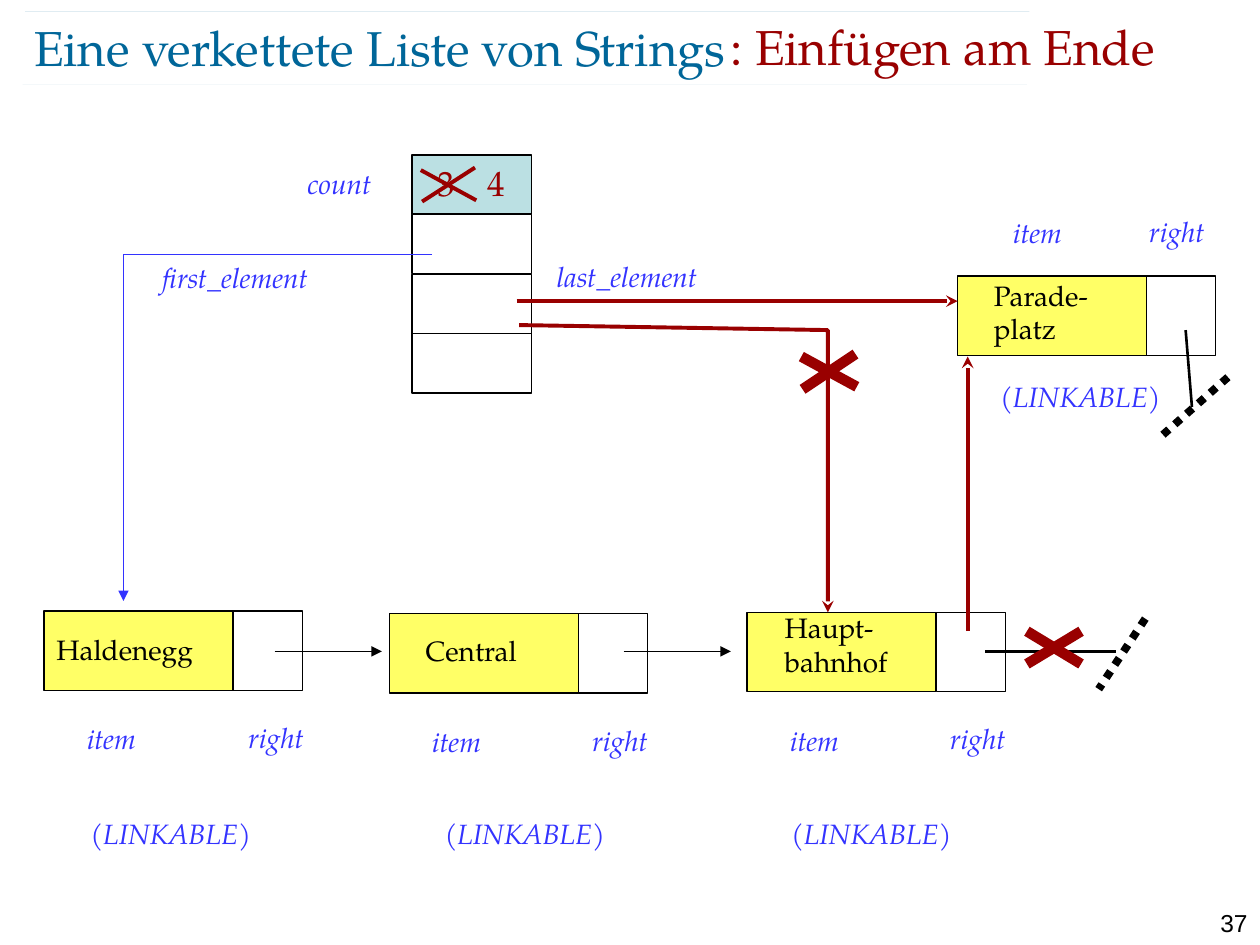
"""Build a slide that shows appending an element to a linked list of strings."""
from dataclasses import dataclass
from typing import Any, Optional

from lxml import etree
from pptx import Presentation
from pptx import util as u
from pptx.dml.color import RGBColor
from pptx.enum import dml, shapes, text
from pptx.oxml import ns

SCALE = 9144
SERIF = "TeX Gyre Pagella"
BLACK = RGBColor(0x00, 0x00, 0x00)
WHITE = RGBColor(0xFF, 0xFF, 0xFF)
YELLOW = RGBColor(0xFF, 0xFF, 0x66)
PALE_BLUE = RGBColor(0xBB, 0xE0, 0xE3)
BLUE = RGBColor(0x33, 0x33, 0xFF)
TEAL = RGBColor(0x00, 0x66, 0x99)
RED = RGBColor(0x99, 0x00, 0x00)

Point = tuple[int, int]
Box = tuple[int, int, int, int]


@dataclass(frozen=True)
class Label:
    text: str
    box: Box
    color: RGBColor = BLUE
    size: int = 16
    italic: bool = True
    font: str = SERIF


@dataclass(frozen=True)
class Node:
    name: str
    corner: Point
    name_box: Box
    item: Point
    right: Point
    type_corner: Point


@dataclass(frozen=True)
class Line:
    start: Point
    end: Point
    color: RGBColor = BLACK
    width: float = 0.75
    head: Optional[str] = None
    dash: Optional[dml.MSO_LINE] = None
    opacity: int = 100


NODES = [
    Node("Haldenegg", (35, 485), (35, 497, 157, 37), (59, 568), (187, 567), (62, 643)),
    Node("Central", (309, 487), (328, 498, 157, 37), (333, 570), (460, 569), (343, 643)),
    Node("Haupt-\nbahnhof", (593, 486), (613, 480, 157, 64), (617, 569), (744, 568), (618, 643)),
    Node("Parade-\nplatz", (760, 219), (779, 216, 157, 64), (794, 166), (902, 165), (784, 296)),
]
LABELS = [
    Label("first_element", (119, 202, 276, 37)),
    Label("last_element", (432, 201, 276, 37)),
    Label("count", (234, 127, 102, 37)),
    Label("3", (337, 123, 102, 43), RED, 20, False),
    Label("4", (377, 123, 102, 43), RED, 20, False),
]
DOTS = dml.MSO_LINE.ROUND_DOT
RULES = [
    Line((18, 67), (815, 67), TEAL, 0.1, opacity=35),
    Line((20, 9), (817, 9), TEAL, 0.1, opacity=35),
]
LINKS = [
    Line((218, 517), (303, 517), head="triangle"),
    Line((495, 517), (580, 517), head="triangle"),
    Line((782, 517), (886, 517), width=1.5),
    Line((909, 491), (872, 547), width=4.5, dash=DOTS),
    Line((343, 202), (98, 202), BLUE),
    Line((98, 202), (98, 477), BLUE, head="triangle"),
    Line((768, 501), (768, 283), RED, 2.25, "stealth"),
    Line((941, 262), (946, 323), width=1.5),
    Line((923, 345), (975, 299), width=4.5, dash=DOTS),
    Line((410, 239), (760, 239), RED, 2.25, "stealth"),
]
CROSSES = [
    (Line((858, 501), (815, 527), RED, 6), Line((815, 501), (858, 527), RED, 6)),
    (Line((679, 281), (637, 309), RED, 6), Line((636, 283), (680, 307), RED, 6)),
    (Line((377, 133), (335, 160), RED, 2.25), Line((334, 135), (378, 159), RED, 2.25)),
]


def px(*values: int) -> list[u.Emu]:
    """Turn px lengths into EMU."""
    return [u.Emu(value * SCALE) for value in values]


def set_values(target: Any, values: dict[str, Any]) -> None:
    """Set each attribute named in values."""
    for name, value in values.items():
        setattr(target, name, value)


def add_rectangle(slide: Any, box: Box, fill: RGBColor) -> None:
    """Draw a filled rectangle with a thin black outline."""
    shape = slide.shapes.add_shape(shapes.MSO_SHAPE.RECTANGLE, *px(*box))
    shape.shadow.inherit = False
    shape.fill.solid()
    shape.fill.fore_color.rgb = fill
    shape.line.color.rgb = BLACK
    shape.line.width = u.Pt(0.75)


def add_text(slide: Any, label: Label, **frame_values: Any) -> Any:
    """Write a label and return its paragraph; parentheses stay upright."""
    frame = slide.shapes.add_textbox(*px(*label.box)).text_frame
    set_values(frame, {"word_wrap": True, **frame_values})
    paragraph = frame.paragraphs[0]
    wrapped = label.text.startswith("(")
    parts = ["(", label.text[1:-1], ")"] if wrapped else label.text.split("\n")
    for index, part in enumerate(parts):
        if index and not wrapped:
            paragraph.add_line_break()
        run = paragraph.add_run()
        run.text = part
        italic = label.italic and part not in ("(", ")")
        set_values(run.font, {"name": label.font, "size": u.Pt(label.size), "italic": italic})
        run.font.color.rgb = label.color
    return paragraph


def style_line(shape: Any, line: Line) -> None:
    """Apply colour, width, dash, opacity and arrowhead to a line."""
    shape.line.color.rgb = line.color
    set_values(shape.line, {"width": u.Pt(line.width), "dash_style": line.dash})
    outline = shape.element.spPr.find(ns.qn("a:ln"))
    if line.opacity < 100:
        color = outline.find(".//" + ns.qn("a:srgbClr"))
        etree.SubElement(color, ns.qn("a:alpha"), val=str(line.opacity * 1000))
    if line.head:
        etree.SubElement(outline, ns.qn("a:tailEnd"), type=line.head)


def add_line(parent: Any, line: Line) -> None:
    """Draw a straight line without a shadow."""
    connector = parent.shapes.add_connector(
        shapes.MSO_CONNECTOR.STRAIGHT, *px(*line.start, *line.end)
    )
    style_line(connector, line)
    etree.SubElement(connector.element.spPr, ns.qn("a:effectLst"))


def add_node(slide: Any, node: Node) -> None:
    """Draw one linkable cell with its name and captions."""
    left, top = node.corner
    add_rectangle(slide, (left, top, 150, 63), YELLOW)
    add_rectangle(slide, (left + 150, top, 55, 63), WHITE)
    add_text(slide, Label(node.name, node.name_box, BLACK, italic=False))
    add_text(slide, Label("item", (*node.item, 79, 37)))
    add_text(slide, Label("right", (*node.right, 79, 37)))
    add_text(slide, Label("(LINKABLE)", (*node.type_corner, 154, 37)))


def add_old_last_link(slide: Any) -> None:
    """Draw the bent arrow to the former last element."""
    builder = slide.shapes.build_freeform(412, 258, scale=float(SCALE))
    builder.add_line_segments([(657, 262), (657, 486)], close=False)
    shape = builder.convert_to_shape()
    shape.shadow.inherit = False
    shape.fill.background()
    style_line(shape, Line((412, 258), (657, 486), RED, 2.25, "stealth"))


def main() -> None:
    """Build and save the slide."""
    presentation = Presentation()
    set_values(presentation, dict(zip(("slide_width", "slide_height"), px(1000, 750))))
    slide = presentation.slides.add_slide(presentation.slide_layouts[6])
    for rule in RULES:
        add_line(slide, rule)
    middle = {"vertical_anchor": text.MSO_ANCHOR.MIDDLE}
    margins = dict.fromkeys(("margin_left", "margin_top", "margin_right", "margin_bottom"), 0)
    title = Label("Eine verkettete Liste von Strings", (27, 13, 869, 48), TEAL, 28, False)
    add_text(slide, title, **middle, **margins)
    add_text(slide, Label(": Einfügen am Ende", (570, -3, 449, 79), RED, 28, False), **middle)
    number = add_text(slide, Label("37", (945, 716, 55, 24), BLACK, 14, False, "Arial"))
    number.alignment = text.PP_ALIGN.RIGHT
    for node in NODES:
        add_node(slide, node)
    for index, fill in enumerate((PALE_BLUE, WHITE, WHITE, WHITE)):
        add_rectangle(slide, (327, 123 + index * 95 // 2, 95, 47), fill)
    for label in LABELS:
        add_text(slide, label)
    for link in LINKS:
        add_line(slide, link)
    add_old_last_link(slide)
    for strokes in CROSSES:
        group = slide.shapes.add_group_shape()
        for stroke in strokes:
            add_line(group, stroke)
    presentation.save("out.pptx")


if __name__ == "__main__":
    main()
